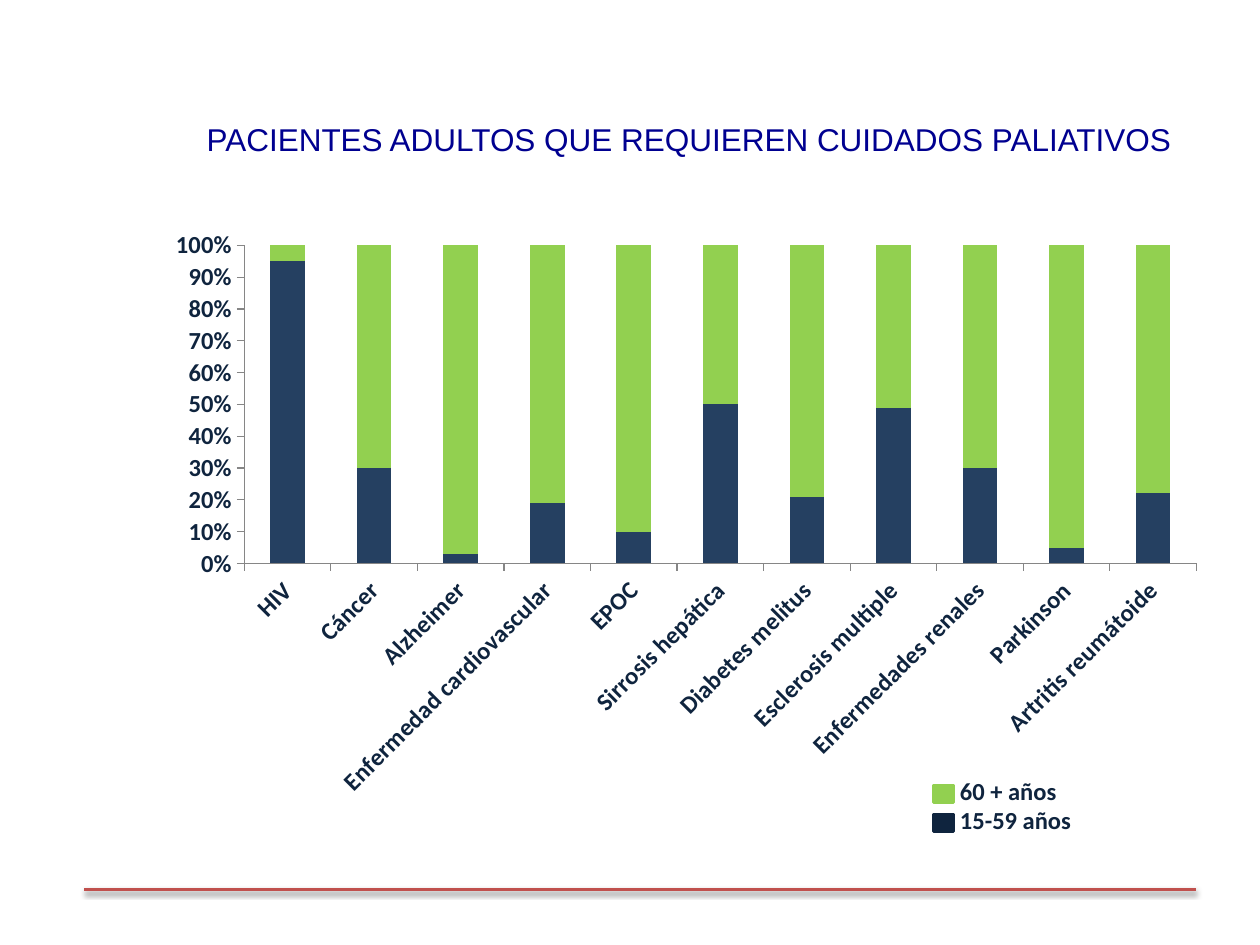
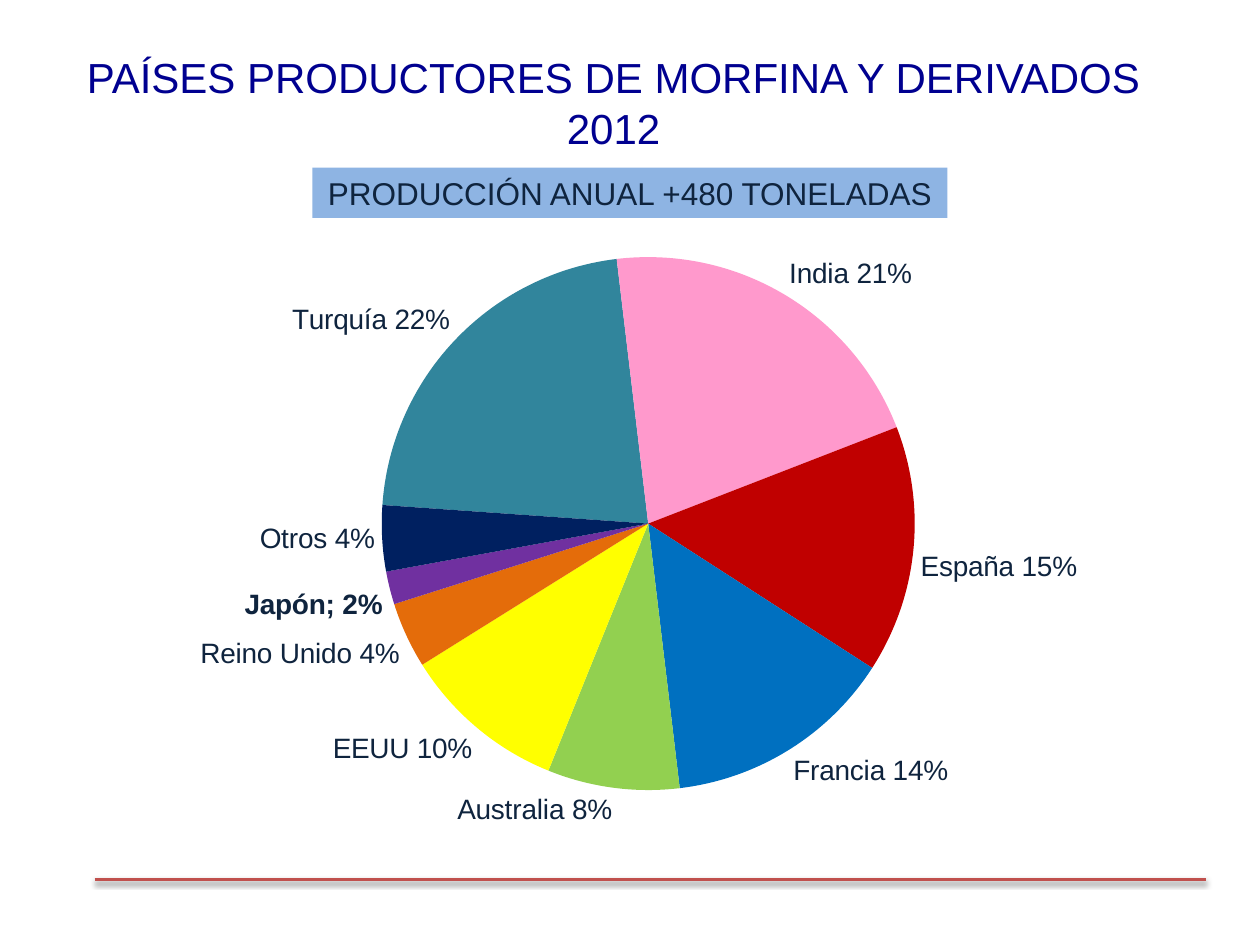
from lxml import etree
from pptx import Presentation
from pptx.chart.data import CategoryChartData
from pptx.dml.color import RGBColor
from pptx.enum.chart import XL_CHART_TYPE, XL_LABEL_POSITION, XL_TICK_MARK
from pptx.enum.shapes import MSO_CONNECTOR, MSO_SHAPE
from pptx.enum.text import MSO_ANCHOR, PP_ALIGN
from pptx.oxml import parse_xml
from pptx.oxml.ns import qn
from pptx.util import Inches, Pt

# Content
COLORS = {
    "title": "000090", "ink": "0F243E", "young": "254061", "old": "92D050",
    "axis": "868686", "banner": "8EB4E3", "rule": "C0504D",
}

PATIENTS_TITLE = "PACIENTES ADULTOS QUE REQUIEREN CUIDADOS PALIATIVOS"
PATIENTS = [  # disease, % aged 15-59; the rest are 60 or older
    ("HIV", 95), ("Cáncer", 30), ("Alzheimer", 3),
    ("Enfermedad cardiovascular", 19), ("EPOC", 10),
    ("Sirrosis hepática", 50), ("Diabetes melitus", 21),
    ("Esclerosis multiple", 49), ("Enfermedades renales", 30),
    ("Parkinson", 5), ("Artritis reumátoide", 22),
]
AGE_KEY = [("60 + años", "old"), ("15-59 años", "ink")]

MORPHINE_TITLE = "PAÍSES PRODUCTORES DE MORFINA Y DERIVADOS 2012"
MORPHINE_BANNER = "PRODUCCIÓN ANUAL +480 TONELADAS"
PRODUCERS = [  # country, share, slice colour
    ("Turquía", 0.22, "31859C"), ("India", 0.21, "FF99CC"),
    ("España", 0.15, "C00000"), ("Francia", 0.14, "0070C0"),
    ("Australia", 0.08, "92D050"), ("EEUU", 0.10, "FFFF00"),
    ("Reino Unido", 0.04, "E46C0A"), ("Japón", 0.02, "7030A0"),
    ("Otros", 0.04, "002060"),
]
HIGHLIGHTED = "Japón"
FIRST_SLICE_ANGLE = 274

RULE_LENGTH = 8.82
RULE_SHADOW = (
    '<a:effectLst xmlns:a="http://schemas.openxmlformats.org/drawingml/2006/main">'
    '<a:outerShdw blurRad="39370" dist="20320" dir="5400000" rotWithShape="0">'
    '<a:srgbClr val="000000"><a:alpha val="38000"/></a:srgbClr>'
    '</a:outerShdw></a:effectLst>'
)


# Shared helpers
def rgb(name):
    return RGBColor.from_string(COLORS.get(name, name))


def box(left, top, width, height):
    return [Inches(v) for v in (left, top, width, height)]


def style_font(font, size, color="ink", bold=False, face="Arial"):
    font.size, font.bold, font.name = Pt(size), bold, face
    font.color.rgb = rgb(color)


def write_text(frame, *lines, align=PP_ALIGN.LEFT, **font_format):
    for index, line in enumerate(lines):
        paragraph = frame.add_paragraph() if index else frame.paragraphs[0]
        paragraph.alignment = align
        run = paragraph.add_run()
        run.text = line
        style_font(run.font, **font_format)


def add_slide(prs, title, place, size, align, wrap, rule_start):
    slide = prs.slides.add_slide(prs.slide_layouts[5])
    heading = slide.shapes.title
    heading.left, heading.top, heading.width, heading.height = box(*place)
    heading.text_frame.vertical_anchor = MSO_ANCHOR.TOP
    heading.text_frame.word_wrap = wrap
    write_text(heading.text_frame, title, size=size, color="title", align=align)

    # Footer rule with its soft shadow
    left, top = rule_start
    rule = slide.shapes.add_connector(
        MSO_CONNECTOR.STRAIGHT, *box(left, top, left + RULE_LENGTH, top))
    rule.line.color.rgb = rgb("rule")
    rule.line.width = Pt(2)
    rule._element.spPr.append(parse_xml(RULE_SHADOW))
    return slide


def add_rect(slide, place, color, outline=None):
    rect = slide.shapes.add_shape(MSO_SHAPE.RECTANGLE, *box(*place))
    rect.shadow.inherit = False
    rect.fill.solid()
    rect.fill.fore_color.rgb = rgb(color)
    if outline:
        rect.line.color.rgb = rgb(color)
        rect.line.width = Pt(outline)
    else:
        rect.line.fill.background()
    return rect


def add_chart(slide, kind, place, categories, series, plot_area):
    data = CategoryChartData()
    data.categories = categories
    for name, values, number_format in series:
        data.add_series(name, values, number_format)
    chart = slide.shapes.add_chart(kind, *box(*place), data).chart
    chart.has_title = chart.has_legend = False
    style_font(chart.font, 18, "000000", face="Calibri")

    # Fixed inner plot area, as fractions of the chart
    area = chart._chartSpace.chart.plotArea
    for old_layout in area.findall(qn("c:layout")):
        area.remove(old_layout)
    layout = etree.Element(qn("c:layout"))
    manual = etree.SubElement(layout, qn("c:manualLayout"))
    settings = [("layoutTarget", "inner"), ("xMode", "edge"), ("yMode", "edge")]
    for tag, value in settings + list(zip("xywh", plot_area)):
        etree.SubElement(manual, qn(f"c:{tag}")).set("val", str(value))
    area.insert(0, layout)
    return chart


# Slide 1: patients by age group
def build_patients(prs):
    slide = add_slide(prs, PATIENTS_TITLE, (1.54, 0.9, 7.93, 0.4), 18,
                      PP_ALIGN.LEFT, False, (0.67, 7.06))
    young = [share for _, share in PATIENTS]
    old = [100 - share for share in young]
    chart = add_chart(
        slide, XL_CHART_TYPE.COLUMN_STACKED_100, (0.5, 1.75, 9, 4.95),
        [disease for disease, _ in PATIENTS],
        [("15-59 años", young, "General"), ("60 + años", old, "General")],
        (0.16, 0.04, 0.84, 0.51))

    plot = chart.plots[0]
    plot.gap_width, plot.overlap, plot.vary_by_categories = 150, 100, False
    for group, color in zip(plot.series, ("young", "old")):
        group.format.fill.solid()
        group.format.fill.fore_color.rgb = rgb(color)

    for axis in (chart.category_axis, chart.value_axis):
        axis.has_major_gridlines = False
        axis.major_tick_mark = XL_TICK_MARK.OUTSIDE
        axis.minor_tick_mark = XL_TICK_MARK.NONE
        axis.format.line.color.rgb = rgb("axis")
        style_font(axis.tick_labels.font, 14, bold=True, face="Calibri")
    chart.value_axis.tick_labels.number_format = "0%"
    chart.value_axis.tick_labels.number_format_is_linked = False
    diseases = chart.category_axis._element.find(qn("c:txPr"))
    diseases.find(qn("a:bodyPr")).set("rot", str(-45 * 60000))

    # Age key
    key = slide.shapes.add_textbox(*box(7.52, 6.11, 1.42, 0.57))
    key.text_frame.word_wrap = True
    write_text(key.text_frame, *[label for label, _ in AGE_KEY],
               size=14, bold=True, face="Calibri")
    for row, (_, color) in enumerate(AGE_KEY):
        add_rect(slide, (7.41, 6.24 + 0.23 * row, 0.16, 0.13), color, outline=2)


# Slide 2: morphine producers
def build_producers(prs):
    slide = add_slide(prs, MORPHINE_TITLE, (0.37, 0.36, 9, 1.25), 24,
                      PP_ALIGN.CENTER, True, (0.75, 6.98))
    countries, shares, _ = zip(*PRODUCERS)
    chart = add_chart(slide, XL_CHART_TYPE.PIE, (0.51, 1.78, 9, 4.95), countries,
                      [("Producción", shares, "0%")], (0.28, 0.05, 0.47, 0.86))
    plot = chart.plots[0]
    plot.vary_by_categories = True
    pie = plot._element
    angle = pie.find(qn("c:firstSliceAng"))
    if angle is None:
        angle = etree.SubElement(pie, qn("c:firstSliceAng"))
    angle.set("val", str(FIRST_SLICE_ANGLE))

    production = plot.series[0]
    labels = production.data_labels
    labels.show_category_name = labels.show_value = True
    labels.number_format, labels.number_format_is_linked = "0%", False
    labels.position = XL_LABEL_POSITION.OUTSIDE_END
    style_font(labels.font, 16, bold=True)
    separator = etree.Element(qn("c:separator"))
    separator.text = "; "
    labels._element.find(qn("c:showBubbleSize")).addnext(separator)

    for index, (country, share, color) in enumerate(PRODUCERS):
        point = production.points[index]
        point.format.fill.solid()
        point.format.fill.fore_color.rgb = rgb(color)
        if country != HIGHLIGHTED:
            write_text(point.data_label.text_frame, f"{country} {share:.0%}",
                       size=16, align=PP_ALIGN.CENTER)
            point.data_label.position = XL_LABEL_POSITION.OUTSIDE_END

    banner = add_rect(slide, (2.48, 1.33, 5.04, 0.4), "banner")
    write_text(banner.text_frame, MORPHINE_BANNER, size=18, align=PP_ALIGN.CENTER)


def main():
    prs = Presentation()
    prs.slide_width, prs.slide_height = Inches(10), Inches(7.5)
    build_patients(prs)
    build_producers(prs)
    prs.save("out.pptx")


if __name__ == "__main__":
    main()
